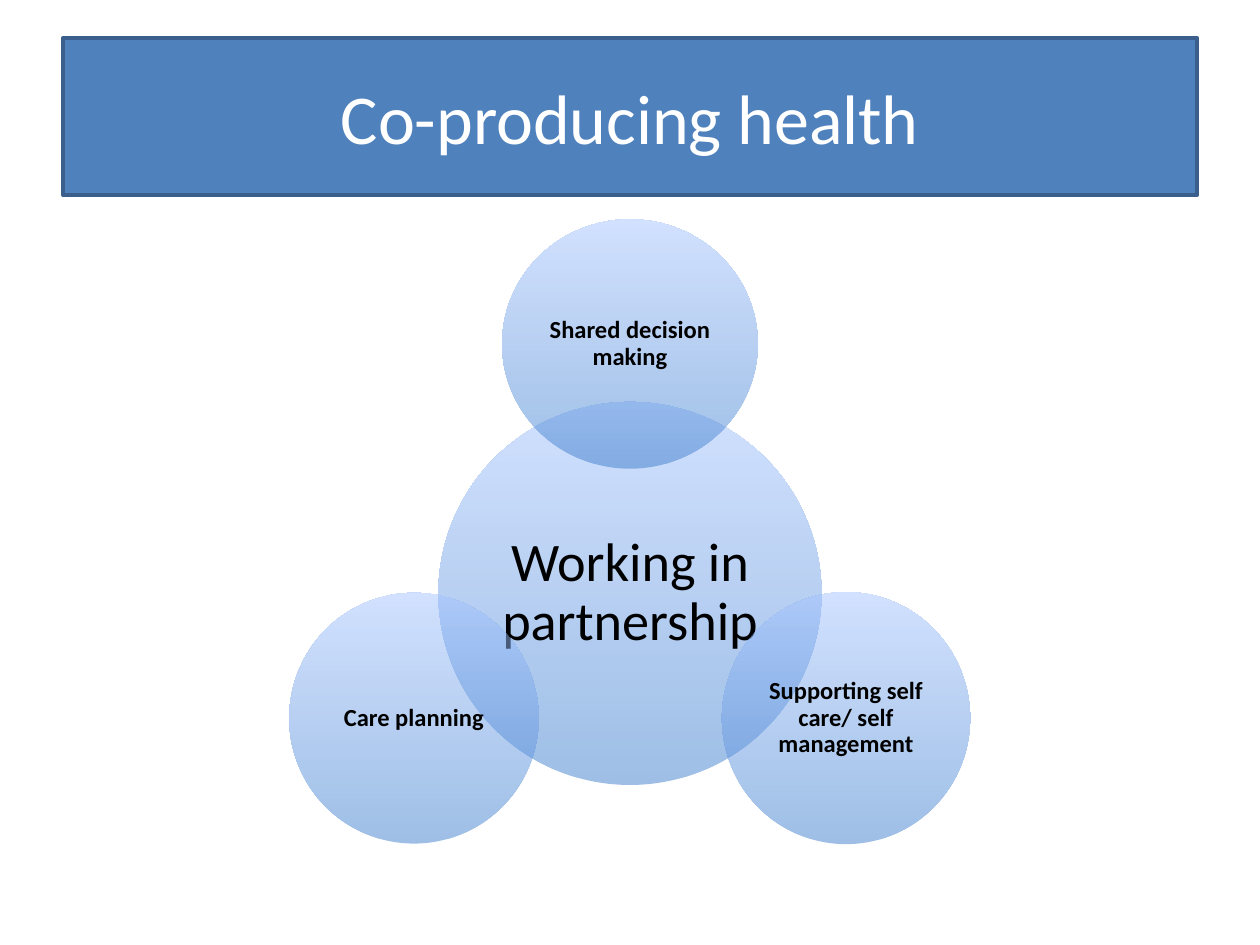
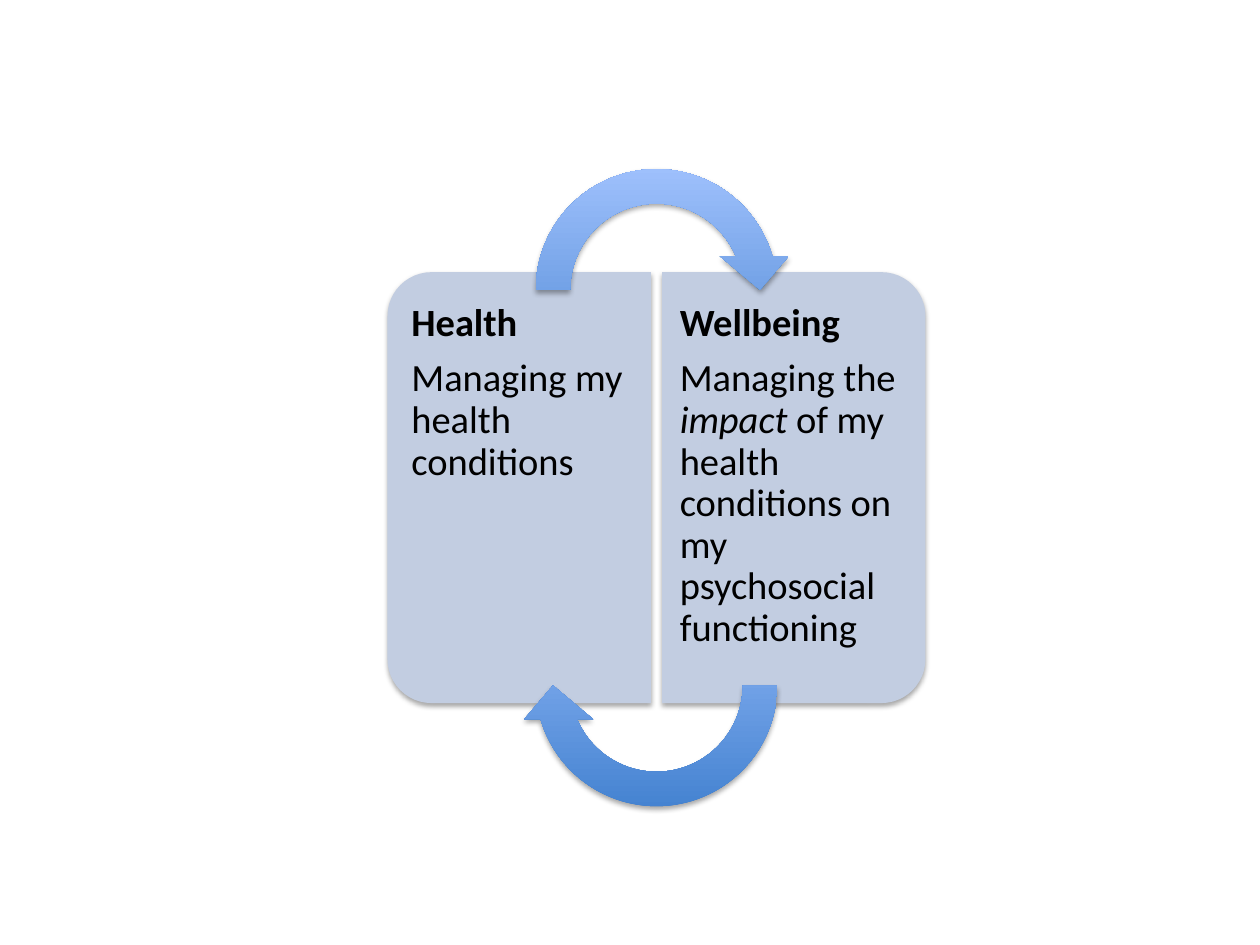
import math

import lxml.etree
import pptx
import pptx.dml.color
import pptx.enum.shapes
import pptx.enum.text
import pptx.oxml.ns
import pptx.util

COLUMNS, ROWS = 10, 7.5
CELL = pptx.util.Inches(1)
FONT = "Calibri"
BLACK, WHITE = "000000", "FFFFFF"
TITLE_FILL, TITLE_LINE = "4F81BD", "3A5F8C"
GRADIENT = ("3F7FCE", "A4C4FF")
PANEL_FILL = "C2CDE1"
SHAPES = pptx.enum.shapes.MSO_SHAPE
ANCHOR = pptx.enum.text.MSO_ANCHOR
ALIGN = pptx.enum.text.PP_ALIGN


def color(hex_code):
    """Turn a hex string into a colour."""
    return pptx.dml.color.RGBColor.from_string(hex_code)


def cells(*lengths):
    """Turn lengths in grid cells into slide units."""
    return [round(length * CELL) for length in lengths]


def centred(cx, cy, width, height):
    """Return the box with the given centre and size in slide units."""
    return cells(cx - width / 2, cy - height / 2, width, height)


def add_xml_child(parent, tag, **attributes):
    """Append a drawing element with its attributes."""
    return lxml.etree.SubElement(parent, pptx.oxml.ns.qn(tag), attributes)


def add_plain_shape(slide, preset, box, rotation=0, adjustments=()):
    """Add a preset shape without outline or shadow."""
    shape = slide.shapes.add_shape(preset, *box)
    shape.rotation = rotation
    for index, value in enumerate(adjustments):
        shape.adjustments[index] = value
    shape.line.fill.background()
    shape.shadow.inherit = False
    return shape


def fill_gradient(shape, opacity=100):
    """Fill a shape from dark at the bottom to light at the top."""
    shape.fill.gradient()
    shape.fill.gradient_angle = 90
    for stop, position, hex_code in zip(shape.fill.gradient_stops, (0, 1), GRADIENT):
        stop.position = position
        stop.color.rgb = color(hex_code)
    gradient = shape.element.spPr.find(pptx.oxml.ns.qn("a:gradFill"))
    gradient.set("rotWithShape", "0")
    if opacity < 100:
        for stop_color in gradient.iter(pptx.oxml.ns.qn("a:srgbClr")):
            add_xml_child(stop_color, "a:alpha", val=str(opacity * 1000))


def drop_shadow(shape):
    """Give a shape a soft shadow below it."""
    effects = shape.element.spPr.find(pptx.oxml.ns.qn("a:effectLst"))
    shadow = add_xml_child(effects, "a:outerShdw", blurRad=str(pptx.util.Pt(3.1)),
                           dist=str(pptx.util.Pt(1.8)), dir="5400000", rotWithShape="0")
    shade = add_xml_child(shadow, "a:srgbClr", val=BLACK)
    add_xml_child(shade, "a:alpha", val="35000")


def format_run(run, size, hex_code=BLACK, bold=False, italic=False):
    """Set the font of one run."""
    run.font.name = FONT
    run.font.size = pptx.util.Pt(size)
    run.font.color.rgb = color(hex_code)
    run.font.bold = bold
    run.font.italic = italic


def add_text(slide, box, paragraphs, size, insets, anchor, alignment):
    """Add paragraphs, each a list of (text, style) runs."""
    frame = slide.shapes.add_textbox(*box).text_frame
    frame.word_wrap = True
    frame.vertical_anchor = anchor
    (frame.margin_left, frame.margin_top,
     frame.margin_right, frame.margin_bottom) = cells(*insets)
    for index, runs in enumerate(paragraphs):
        paragraph = frame.add_paragraph() if index else frame.paragraphs[0]
        paragraph.alignment = alignment
        paragraph.line_spacing = 0.9
        paragraph.space_after = pptx.util.Pt(0.35 * size)
        for text, style in runs:
            run = paragraph.add_run()
            run.text = text
            format_run(run, size, **style)


def add_title(slide, text):
    """Turn the title placeholder into the filled title band."""
    title = slide.shapes.title
    title.left, title.top, title.width, title.height = cells(0.5, 0.3, COLUMNS - 1, 1.25)
    title.fill.solid()
    title.fill.fore_color.rgb = color(TITLE_FILL)
    title.line.color.rgb = color(TITLE_LINE)
    title.line.width = pptx.util.Pt(2)
    title.text_frame.text = text
    title.text_frame.vertical_anchor = ANCHOR.MIDDLE
    paragraph = title.text_frame.paragraphs[0]
    paragraph.alignment = ALIGN.CENTER
    format_run(paragraph.runs[0], 40, WHITE)


def add_circle(slide, cx, cy, width, height, text, size, inset, bold):
    """Add a translucent circle with its label in the inscribed square."""
    circle = add_plain_shape(slide, SHAPES.OVAL, centred(cx, cy, width, height))
    fill_gradient(circle, opacity=50)
    inscribed = math.sqrt(0.5)
    label_box = centred(cx, cy, width * inscribed, height * inscribed)
    add_text(slide, label_box, [[(text, {"bold": bold})]], size, [inset] * 4,
             ANCHOR.MIDDLE, ALIGN.CENTER)


def add_panel(slide, side, cx, cy, paragraphs):
    """Add a panel rounded on its outer side: -1 for left, 1 for right."""
    height, width = 3.42, 2.09
    panel = add_plain_shape(slide, SHAPES.ROUND_2_SAME_RECTANGLE,
                            centred(cx, cy, height, width), 90 * side % 360, (0.167, 0))
    panel.fill.solid()
    panel.fill.fore_color.rgb = color(PANEL_FILL)
    drop_shadow(panel)
    inner, outer = 0.14, 0.09
    left, right = (outer, inner) if side < 0 else (inner, outer)
    text_box = centred(cx - side * 0.05, cy, width - 0.1, height - 0.2)
    add_text(slide, text_box, paragraphs, 22, (left, 0.15, right, 0.15),
             ANCHOR.TOP, ALIGN.LEFT)


def add_cycle_arrow(slide, cx, cy, rotation):
    """Add a half-circle arrow."""
    arrow = add_plain_shape(slide, SHAPES.CIRCULAR_ARROW, centred(cx, cy, 2.19, 2.19),
                            rotation, (0.125, 11.423, 204.577, 108, 0.125))
    fill_gradient(arrow)
    drop_shadow(arrow)


def build_partnership(slide):
    """Place three circles at equal angles round the central one."""
    add_title(slide, "Co-producing health")
    cx, cy, radius = COLUMNS / 2, 4.71, 1.98
    add_circle(slide, cx, cy, 3.04, 3.04, "Working in partnership", 31, 0.04, False)
    practices = [("Shared decision making", 2.03, 1.98),
                 ("Supporting self care/ self management", 1.97, 2),
                 ("Care planning", 1.98, 1.99)]
    for index, (practice, width, height) in enumerate(practices):
        angle = math.tau * index / len(practices)
        add_circle(slide, cx + radius * math.sin(angle), cy - radius * math.cos(angle),
                   width, height, practice, 14, 0.02, True)


def build_wellbeing(slide):
    """Place the two panels and the arrows that circle between them."""
    cx, cy = 5.21, 3.87
    bold, plain, italic = {"bold": True}, {}, {"italic": True}
    health = [[("Health", bold)], [("Managing my health conditions", plain)]]
    wellbeing = [[("Wellbeing", bold)],
                 [("Managing the ", plain), ("impact", italic),
                  (" of my health conditions on my psychosocial functioning", plain)]]
    for side, paragraphs in ((-1, health), (1, wellbeing)):
        add_panel(slide, side, cx + side * 1.09, cy, paragraphs)
    for side, rotation in ((-1, 0), (1, 180)):
        add_cycle_arrow(slide, cx, cy + side * 1.57, rotation)


def main():
    """Build and save the two slides."""
    deck = pptx.Presentation()
    deck.slide_width, deck.slide_height = cells(COLUMNS, ROWS)
    title_only, blank = deck.slide_layouts[5], deck.slide_layouts[6]
    build_partnership(deck.slides.add_slide(title_only))
    build_wellbeing(deck.slides.add_slide(blank))
    deck.save("out.pptx")


if __name__ == "__main__":
    main()
